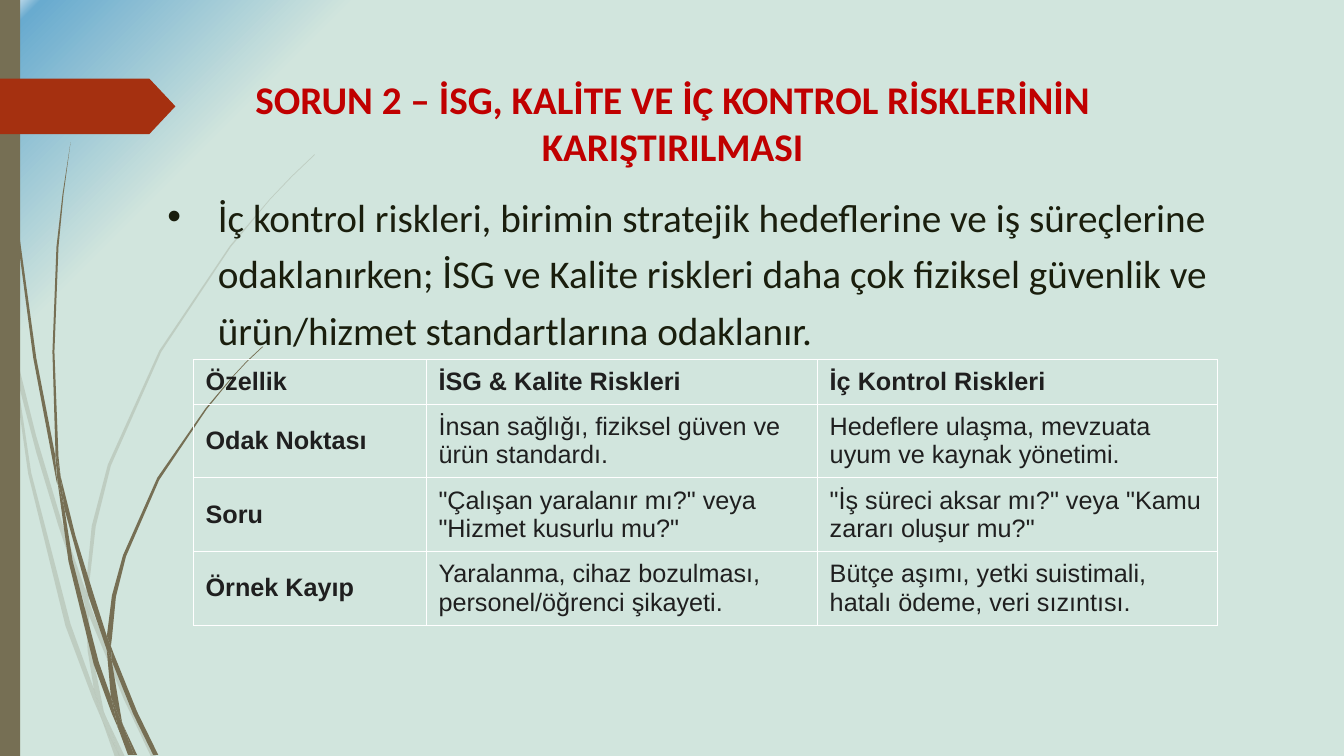
import lxml.etree
import pptx
import pptx.dml.color
import pptx.enum.shapes
import pptx.enum.text
import pptx.oxml
import pptx.oxml.ns
import pptx.util

Inches = pptx.util.Inches
COLORS = {"mint": "D1E5DD", "sky": "69ABCF", "white": "FFFFFF", "stem": "766F54",
          "tag": "A53010", "title": "C00000", "body": "1A1E0D", "cell": "1F1F1F"}
NAMESPACE = pptx.oxml.ns.nsdecls("a")

# Outlines of the grass pieces, as corner points in inches
FAINT_GRASS = [
    [(0.11, 3.5), (0.09, 3.22), (0, 2.82), (0, 2.99), (0.1, 3.44)],
    [(0.58, 5.22), (0.84, 5.99), (0.85, 5.86), (0.62, 5.2), (0.36, 4.33), (0.14, 3.45),
     (0.17, 3.76), (0.36, 4.49)],
    [(0.92, 6.07), (0.88, 5.96), (0.88, 6.1), (1.23, 6.94), (1.5, 7.51), (1.55, 7.51), (1.27, 6.92)],
    [(1.19, 7.51), (1.24, 7.51), (1.05, 7.11)],
    [(0.93, 6.83), (0.7, 6.19), (0.31, 4.69), (0.17, 3.76), (0.11, 3.5), (0.28, 4.7),
     (0.65, 6.21), (0.92, 6.93), (1.01, 7.14), (0.99, 7.07)],
    [(0.84, 5.99), (0.87, 6.46), (0.93, 6.83), (0.96, 6.92), (1.05, 7.11), (1.03, 7.06),
     (0.91, 6.46), (0.88, 6.1), (0.88, 6.08)],
    [(0.88, 5.84), (0.95, 5.22), (1.1, 4.62), (1.6, 3.49), (2.29, 2.45), (2.68, 1.98), (2.9, 1.75),
     (3.12, 1.54), (3.12, 1.53), (2.89, 1.75), (2.68, 1.97), (2.28, 2.44), (1.58, 3.48),
     (1.07, 4.61), (0.91, 5.22), (0.85, 5.84), (0.85, 5.86), (0.88, 5.96)],
    [(1.01, 7.14), (1.14, 7.51), (1.19, 7.51)],
    [(0.88, 6.08), (0.88, 6.1), (0.88, 5.96), (0.85, 5.86), (0.84, 5.99)],
    [(0.96, 6.92), (0.93, 6.83), (0.99, 7.07), (1.01, 7.14), (1.19, 7.51), (1.05, 7.11)],
]
SOLID_GRASS = [
    [(0.07, 1.1), (0.17, 2.33), (0.33, 3.55), (0.56, 4.77), (0.57, 4.81), (0.55, 4.57), (0.55, 4.53),
     (0.36, 3.55), (0.19, 2.32), (0.08, 1.09), (0.05, 0.48), (0.04, 0), (0.03, 0), (0.04, 0.48)],
    [(0.88, 5.92), (1.06, 6.45), (1.06, 6.33), (1.06, 6.31), (0.93, 5.9), (0.75, 5.32),
     (0.6, 4.72), (0.64, 5.05)],
    [(1.13, 6.49), (1.1, 6.41), (1.11, 6.56), (1.32, 7.08), (1.52, 7.49), (1.57, 7.49), (1.36, 7.06)],
    [(1.1, 6.91), (0.98, 6.57), (0.72, 5.56), (0.64, 5.05), (0.57, 4.77), (0.68, 5.57),
     (0.93, 6.59), (1.11, 7.08), (1.17, 7.22), (1.16, 7.17)],
    [(0.6, 4.72), (0.58, 4.53), (0.54, 3.49), (0.58, 2.45), (0.63, 1.93), (0.7, 1.41),
     (0.62, 1.93), (0.56, 2.45), (0.52, 3.49), (0.55, 4.49)],
    [(1.33, 7.49), (1.36, 7.49), (1.22, 7.19)],
    [(0.57, 4.77), (0.64, 5.05), (0.6, 4.72), (0.55, 4.49), (0.55, 4.53)],
    [(1.11, 6.33), (1.15, 5.92), (1.25, 5.52), (1.58, 4.76), (2.05, 4.06), (2.31, 3.74),
     (2.45, 3.59), (2.61, 3.44), (2.6, 3.44), (2.45, 3.58), (2.31, 3.73), (2.04, 4.05),
     (1.56, 4.74), (1.22, 5.51), (1.11, 5.91), (1.06, 6.31), (1.1, 6.41)],
    [(1.17, 7.22), (1.27, 7.49), (1.31, 7.49)],
    [(1.06, 6.45), (1.1, 6.91), (1.16, 7.06), (1.22, 7.19), (1.21, 7.16), (1.11, 6.56), (1.09, 6.51)],
    [(1.06, 6.45), (1.09, 6.51), (1.11, 6.56), (1.1, 6.41), (1.06, 6.31), (1.06, 6.33)],
    [(1.16, 7.06), (1.1, 6.91), (1.16, 7.17), (1.17, 7.22), (1.3, 7.49), (1.33, 7.49), (1.22, 7.19)],
]
TITLE = "SORUN 2 – İSG, KALİTE VE İÇ KONTROL RİSKLERİNİN KARIŞTIRILMASI"
BODY = ("İç kontrol riskleri, birimin stratejik hedeflerine ve iş süreçlerine odaklanırken; "
        "İSG ve Kalite riskleri daha çok fiziksel güvenlik ve ürün/hizmet standartlarına odaklanır.")
RISK_ROWS = [
    ("Özellik", "İSG & Kalite Riskleri", "İç Kontrol Riskleri"),
    ("Odak Noktası", "İnsan sağlığı, fiziksel güven ve ürün standardı.",
     "Hedeflere ulaşma, mevzuata uyum ve kaynak yönetimi."),
    ("Soru", '"Çalışan yaralanır mı?" veya "Hizmet kusurlu mu?"',
     '"İş süreci aksar mı?" veya "Kamu zararı oluşur mu?"'),
    ("Örnek Kayıp", "Yaralanma, cihaz bozulması, personel/öğrenci şikayeti.",
     "Bütçe aşımı, yetki suistimali, hatalı ödeme, veri sızıntısı."),
]


def color(name):
    return pptx.dml.color.RGBColor.from_string(COLORS[name])


def paint(shape, name):
    shape.fill.solid()
    shape.fill.fore_color.rgb = color(name)
    shape.line.fill.background()
    shape.shadow.inherit = False


def write(para, text, font, size, name, bold=False):
    span = para.add_run()
    span.text = text
    span.font.name, span.font.size, span.font.bold = font, pptx.util.Pt(size), bold
    span.font.color.rgb = color(name)


def add_background(page):
    page.background.fill.gradient()
    gradient = page.element.find(".//" + pptx.oxml.ns.qn("a:gradFill"))
    stops = "".join(f'<a:gs pos="{place * 1000}"><a:srgbClr val="{COLORS[name]}"/></a:gs>'
                    for place, name in [(0, "mint"), (83, "mint"), (98, "sky"), (100, "white")])
    gradient.getparent().replace(gradient, pptx.oxml.parse_xml(
        f'<a:gradFill {NAMESPACE} rotWithShape="1"><a:gsLst>{stops}</a:gsLst>'
        '<a:path path="circle"><a:fillToRect l="100000" t="100000"/></a:path></a:gradFill>'))


def add_grass(page, left, top, outline, opacity):
    points = [(Inches(left + x), Inches(top + y)) for x, y in outline]
    builder = page.shapes.build_freeform(*points[0], scale=1.0)
    builder.add_line_segments(points[1:], close=True)
    piece = builder.convert_to_shape()
    paint(piece, "stem")
    if opacity < 100:
        tint = piece.fill._xPr.find(".//" + pptx.oxml.ns.qn("a:srgbClr"))
        lxml.etree.SubElement(tint, pptx.oxml.ns.qn("a:alpha"), val=str(opacity * 1000))


def add_decoration(page, left, top, height):
    # Grass
    for outlines, opacity in [(FAINT_GRASS, 20), (SOLID_GRASS, 100)]:
        for outline in outlines:
            add_grass(page, left, top, outline, opacity)
    # Side bar and page tag
    kinds = pptx.enum.shapes.MSO_SHAPE
    bar = page.shapes.add_shape(kinds.RECTANGLE, Inches(left), Inches(top), Inches(0.2), Inches(height))
    paint(bar, "stem")
    tag = page.shapes.add_shape(kinds.PENTAGON, Inches(left), Inches(top + 0.78),
                                Inches(1.74), Inches(0.55))
    tag.adjustments[0] = 0.47
    paint(tag, "tag")


def place_text(page, holder, left, top, width, height):
    """Put a placeholder in its box, in front of the decoration."""
    page.shapes._spTree.append(holder._element)
    holder.left, holder.top = Inches(left), Inches(top)
    holder.width, holder.height = Inches(width), Inches(height)
    frame = holder.text_frame
    frame.word_wrap = True
    frame.auto_size = pptx.enum.text.MSO_AUTO_SIZE.NONE
    frame.vertical_anchor = pptx.enum.text.MSO_ANCHOR.TOP
    para = frame.paragraphs[0]
    para.space_before = pptx.util.Pt(0)
    return para


def add_title(page, *box):
    para = place_text(page, page.shapes.title, *box)
    para.alignment = pptx.enum.text.PP_ALIGN.CENTER
    write(para, TITLE, "Calibri", 28, "title", bold=True)


def add_body(page, *box):
    para = place_text(page, page.placeholders[1], *box)
    para.line_spacing = 1.2
    write(para, BODY, "Calibri", 28, "body")
    properties = para._p.get_or_add_pPr()
    properties.set("marL", str(Inches(0.5)))
    properties.set("indent", str(Inches(-0.5)))
    for bullet in (f'<a:buClr {NAMESPACE}><a:srgbClr val="{COLORS["body"]}"/></a:buClr>',
                   f'<a:buFont {NAMESPACE} typeface="Arial"/>',
                   f'<a:buChar {NAMESPACE} char="•"/>'):
        properties.append(pptx.oxml.parse_xml(bullet))


def format_cell(cell, text, bold):
    cell.margin_left = cell.margin_right = Inches(0.12)
    cell.margin_top = cell.margin_bottom = Inches(0.08)
    cell.vertical_anchor = pptx.enum.text.MSO_ANCHOR.MIDDLE
    write(cell.text_frame.paragraphs[0], text, "Arial", 18, "cell", bold)
    properties = cell._tc.get_or_add_tcPr()
    for side in "LRTB":
        properties.append(pptx.oxml.parse_xml(
            f'<a:ln{side} {NAMESPACE} w="9525"><a:solidFill><a:srgbClr val="{COLORS["white"]}"/>'
            f'</a:solidFill></a:ln{side}>'))
    cell.fill.background()


def add_risk_table(page, left, top, widths, heights):
    table = page.shapes.add_table(len(heights), len(widths), Inches(left), Inches(top),
                                  Inches(sum(widths)), Inches(sum(heights))).table
    table.first_row = table.horz_banding = False
    for column, width in zip(table.columns, widths):
        column.width = Inches(width)
    for row, height in zip(table.rows, heights):
        row.height = Inches(height)
    for r, texts in enumerate(RISK_ROWS):
        for c, text in enumerate(texts):
            format_cell(table.cell(r, c), text, bold=r == 0 or c == 0)


def main():
    deck = pptx.Presentation()
    deck.slide_width, deck.slide_height = Inches(13.33), Inches(7.5)
    page = deck.slides.add_slide(deck.slide_layouts[1])
    add_background(page)
    add_decoration(page, 0, 0, 7.5)
    add_title(page, 1.67, 0.7, 10, 0.68)
    add_body(page, 1.56, 1.77, 11.1, 5.71)
    add_risk_table(page, 1.92, 3.57, [2.31, 3.88, 3.97], [0.44, 0.73, 0.73, 0.73])
    deck.save("out.pptx")


if __name__ == "__main__":
    main()
